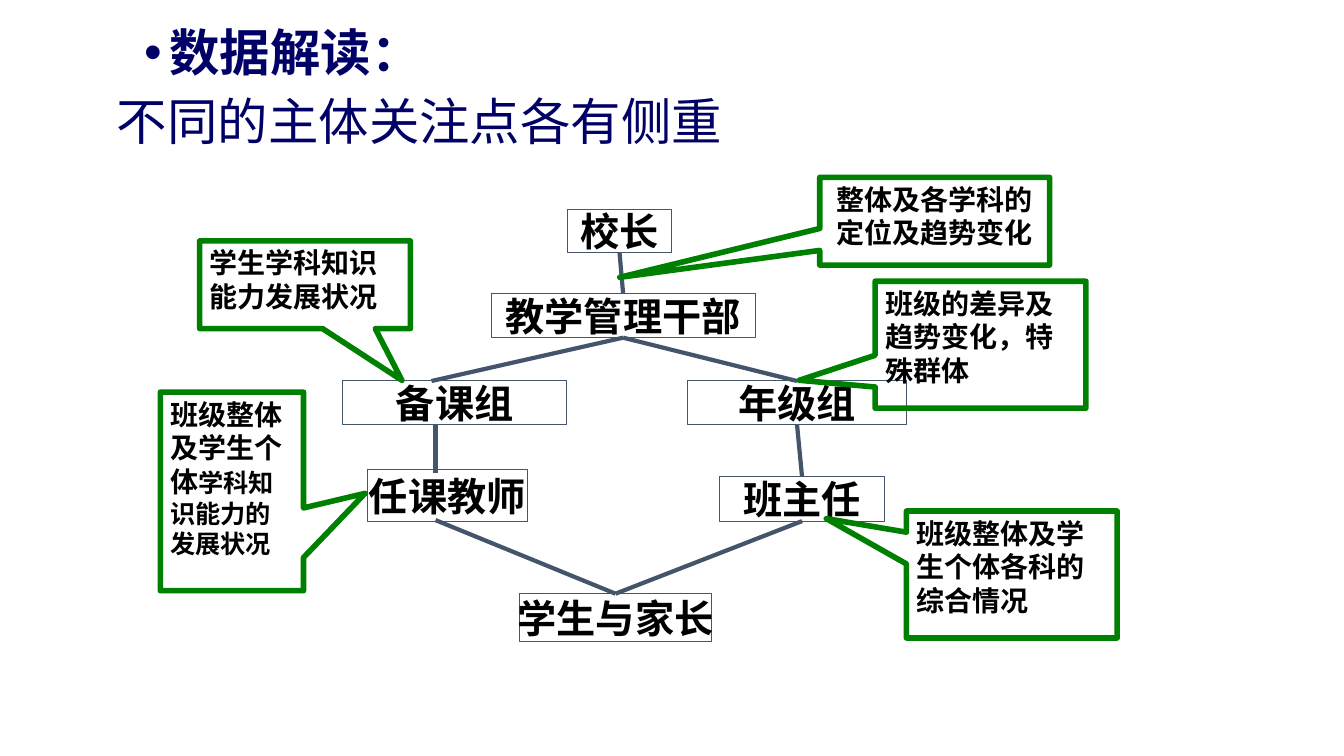
"""Build a slide showing what each school role looks for in the data."""
from lxml.etree import SubElement
from pptx import Presentation
from pptx.dml.color import RGBColor
from pptx.enum.shapes import MSO_CONNECTOR, MSO_SHAPE
from pptx.enum.text import MSO_ANCHOR, MSO_AUTO_SIZE, PP_ALIGN
from pptx.oxml.ns import qn
from pptx.util import Inches, Pt

COLORS = {"heading": "000066", "text": "000000", "frame": "44546A",
          "callout": "008000", "paper": "FFFFFF"}
HEADING_FONT, LABEL_FONT = "Noto Sans CJK SC", "Calibri"
CELL = Inches(0.1)
TOP, BOTTOM = 0, 2

BODY_AREA = (8.3, 2.3, 93, 56.8)
# text, bold, level, left margin, first-line indent, space before, bullet
HEADINGS = [
    ("数据解读：", True, 1, 7.5, -2.5, 5, "•"),
    ("不同的主体关注点各有侧重", False, 0, 2.3, 0, 10, None),
]
# name: left, top, width, height in grid cells
ROLES = {
    "校长": (56.3, 20.8, 10.3, 4.3),
    "教学管理干部": (48.7, 29.1, 26.2, 4.4),
    "备课组": (34, 37.8, 22.2, 4.3),
    "任课教师": (36.4, 46.6, 15.9, 5.1),
    "年级组": (68.2, 37.8, 21.7, 4.3),
    "班主任": (71.4, 47.3, 16.3, 4.4),
    "学生与家长": (51.5, 58.9, 19.1, 4.7),
}
FILLED_ROLES = {"班主任"}
# each end is a role with its side, or a grid point
LINKS = [
    (("教学管理干部", BOTTOM), (42.8, 37.8)),
    (("教学管理干部", BOTTOM), ("年级组", TOP)),
    ((43.2, 42.2), (43.2, 46.9)),
    (("年级组", BOTTOM), ("班主任", TOP)),
    ((43.2, 51.6), ("学生与家长", TOP)),
    (("班主任", BOTTOM), ("学生与家长", TOP)),
    (("校长", BOTTOM), ("教学管理干部", TOP)),
]
# area, pointer tip as shares of the area from its centre, alignment, runs
CALLOUTS = [
    ((81.3, 17.6, 22.8, 8.7), (-1.37, 0.64), PP_ALIGN.CENTER,
     [("整体及各学科的定位及趋势变化", 20)]),
    ((86.8, 27.9, 20.9, 12.6), (-0.86, 0.28), PP_ALIGN.LEFT,
     [("班级的差异及趋势变化，特殊群体", 20)]),
    ((19.8, 23.9, 20.9, 8.7), (0.46, 1.09), PP_ALIGN.LEFT,
     [("学生学科知识能力发展状况", 20)]),
    ((89.9, 50.7, 20.9, 12.6), (-0.88, -0.44), PP_ALIGN.LEFT,
     [("班级整体及学生个体各科的综合情况", 20)]),
    ((15.9, 38.9, 14.2, 19.7), (0.93, 0.01), PP_ALIGN.LEFT,
     [("班级整体及学生个体", 20), ("学科知识能力的发展状况", 18)]),
]


def cells(*values):
    return [round(value * CELL) for value in values]


def color(name):
    return RGBColor.from_string(COLORS[name])


def add_span(para, text, size, font, ink, bold=True):
    span = para.add_run()
    span.text = text
    span.font.size, span.font.bold, span.font.name = Pt(size), bold, font
    span.font.color.rgb = color(ink)
    return span


def add_headings(page):
    page.shapes.title.element.getparent().remove(page.shapes.title.element)
    body = page.placeholders[1]
    body.left, body.top, body.width, body.height = cells(*BODY_AREA)
    frame = body.text_frame
    frame.auto_size = MSO_AUTO_SIZE.NONE
    for index, (text, bold, level, margin, indent, before, bullet) in enumerate(HEADINGS):
        para = frame.add_paragraph() if index else frame.paragraphs[0]
        para.level, para.line_spacing, para.space_before = level, 0.9, Pt(before)
        span = add_span(para, text, 36, HEADING_FONT, "heading", bold)
        SubElement(span.font._element, qn("a:ea"), typeface=HEADING_FONT)
        settings = para._p.get_or_add_pPr()
        left, first = cells(margin, indent)
        settings.set("marL", str(left))
        settings.set("indent", str(first))
        if bullet:
            SubElement(settings, qn("a:buFont"), typeface="Arial")
            SubElement(settings, qn("a:buChar"), char=bullet)
        else:
            SubElement(settings, qn("a:buNone"))


def add_box(page, kind, area, line, width, align, runs):
    box = page.shapes.add_shape(kind, *cells(*area))
    box.shadow.inherit = False
    box.fill.background()
    box.line.color.rgb, box.line.width = color(line), Pt(width)
    para = box.text_frame.paragraphs[0]
    para.alignment = align
    for text, size in runs:
        add_span(para, text, size, LABEL_FONT, "text")
    return box


def add_role(page, name, area):
    box = add_box(page, MSO_SHAPE.RECTANGLE, area, "frame", 0.75,
                  PP_ALIGN.CENTER, [(name, 28)])
    box.text_frame.word_wrap = False
    box.text_frame.vertical_anchor = MSO_ANCHOR.MIDDLE
    if name in FILLED_ROLES:
        box.fill.solid()
        box.fill.fore_color.rgb = color("paper")
    return box


def end_point(end):
    if end[0] not in ROLES:
        return cells(*end)
    left, top, width, height = ROLES[end[0]]
    return cells(left + width / 2, top + (height if end[1] == BOTTOM else 0))


def add_link(page, boxes, start, finish):
    link = page.shapes.add_connector(MSO_CONNECTOR.STRAIGHT,
                                     *end_point(start), *end_point(finish))
    link.line.color.rgb, link.line.width = color("frame"), Pt(3)
    SubElement(link._element.spPr, qn("a:effectLst"))
    for end, join in ((start, link.begin_connect), (finish, link.end_connect)):
        if end[0] in boxes:
            join(boxes[end[0]], end[1])


def add_callout(page, area, tip, align, runs):
    box = add_box(page, MSO_SHAPE.RECTANGULAR_CALLOUT, area, "callout", 4, align, runs)
    box.adjustments[0], box.adjustments[1] = tip
    box.text_frame.word_wrap = True
    box.text_frame.vertical_anchor = MSO_ANCHOR.TOP


def main():
    deck = Presentation()
    deck.slide_width, deck.slide_height = Inches(13.33), Inches(7.5)
    page = deck.slides.add_slide(deck.slide_layouts[1])
    add_headings(page)
    boxes = {name: add_role(page, name, area) for name, area in ROLES.items()}
    for start, finish in LINKS:
        add_link(page, boxes, start, finish)
    for callout in CALLOUTS:
        add_callout(page, *callout)
    deck.save("out.pptx")


if __name__ == "__main__":
    main()
